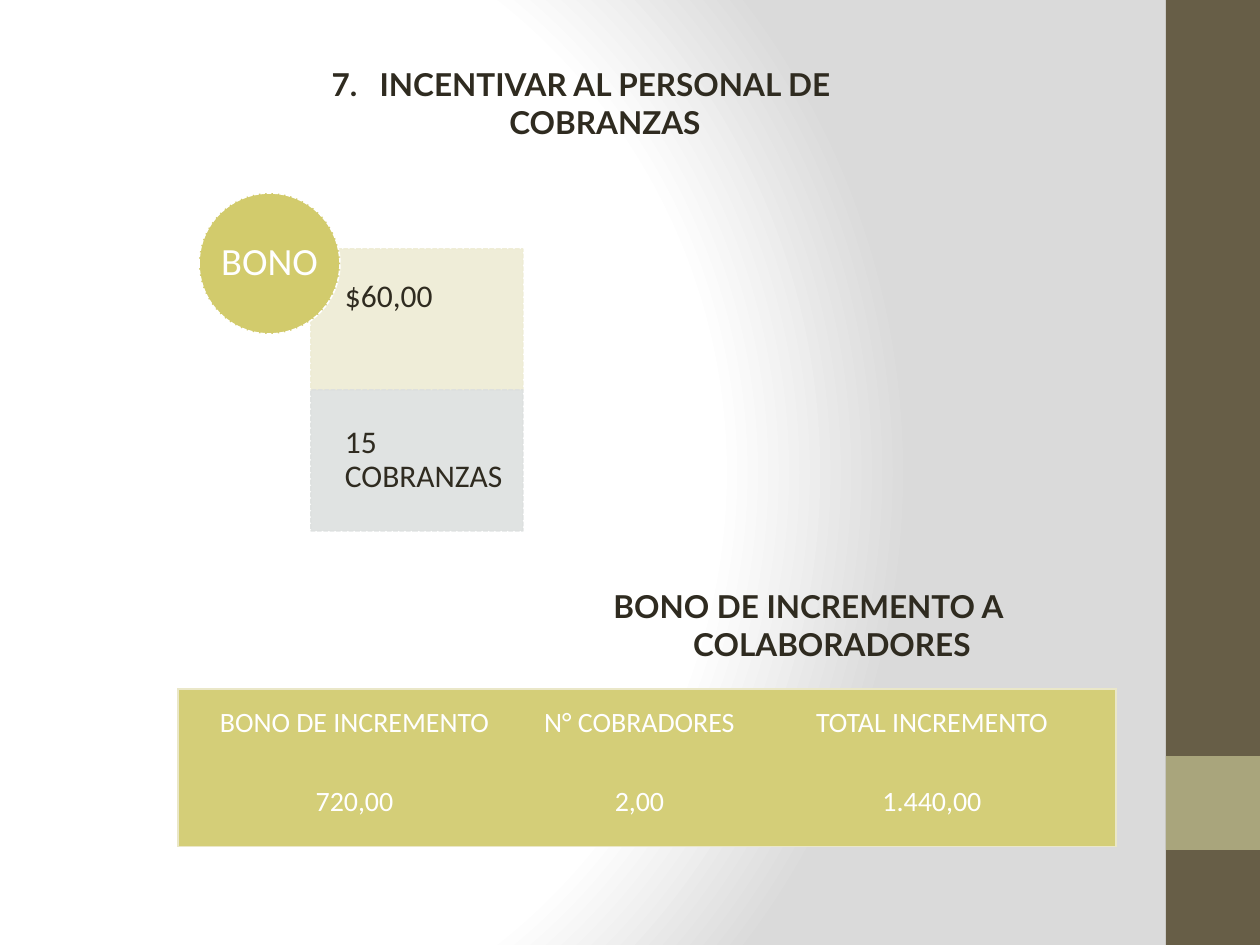
from lxml.etree import SubElement as Sub
from pptx import Presentation
from pptx.dml.color import RGBColor
from pptx.enum.dml import MSO_LINE as Dash
from pptx.enum.shapes import MSO_SHAPE as Kind
from pptx.enum.text import MSO_ANCHOR as Anchor, PP_ALIGN as Align
from pptx.oxml import parse_xml
from pptx.oxml.ns import nsdecls, qn
from pptx.util import Pt

SCALE = 914400 / 126
INK, WHITE, GOLD, EDGE = "2F2B20", "FFFFFF", "D2CB6C", "EAE7C8"
SIDES = ("left", "top", "right", "bottom")
PLAIN = "{2D5ABB26-0587-4C30-8999-92F81FD0307C}"


def px(n):
    return round(n * SCALE)


def paint(fmt, color, alpha=100):
    fmt.solid()
    fmt.fore_color.rgb = RGBColor.from_string(color)
    if alpha < 100:
        for clr in fmt._xPr.iter(qn("a:srgbClr")):
            Sub(clr, qn("a:alpha"), val=str(alpha * 1000))


def write(frame, text, size, color, face="Calibri", bold=False, **form):
    para = frame.paragraphs[0]
    for key, val in form.items():
        setattr(para, key, val)
    run = para.add_run()
    run.text = text
    for key, val in {"size": Pt(size), "name": face, "bold": bold}.items():
        setattr(run.font, key, val)
    paint(run.font.fill, color)
    return para


def block(slide, kind, box, color, edge=None, alpha=100):
    shape = slide.shapes.add_shape(kind, *map(px, box))
    shape.shadow.inherit = False
    paint(shape.fill, color, alpha)
    if edge:
        paint(shape.line.fill, edge, alpha)
        shape.line.width = Pt(0.9)
        shape.line.dash_style = Dash.SQUARE_DOT
    else:
        shape.line.fill.background()


def label(slide, box, pads=None):
    frame = slide.shapes.add_textbox(*map(px, box)).text_frame
    frame.word_wrap = True
    if pads:
        frame.vertical_anchor = Anchor.MIDDLE
        for side, pad in zip(SIDES, pads):
            setattr(frame, "margin_" + side, px(pad))
    return frame


def backdrop(slide):
    paint(slide.background.fill, WHITE)
    old = slide.element.find(".//" + qn("p:bgPr") + "/" + qn("a:solidFill"))
    stops = "".join(
        f'<a:gs pos="{pos}000"><a:srgbClr val="{color}"/></a:gs>'
        for pos, color in ((0, WHITE), (75, WHITE), (100, "DADADA")))
    old.getparent().replace(old, parse_xml(
        f'<a:gradFill {nsdecls("a")} rotWithShape="1"><a:gsLst>{stops}</a:gsLst>'
        '<a:path path="circle"><a:fillToRect l="20000" t="50000" '
        'r="100000" b="50000"/></a:path></a:gradFill>'))


def sidebar(slide, x, y, w, h):
    block(slide, Kind.RECTANGLE, (x, y, w, h), "675E47")
    block(slide, Kind.RECTANGLE, (x, y + h * 4 // 5, w, w), "A9A57C")


def heading(slide, box, text, start=None):
    para = write(label(slide, box), text, 18, INK, "Lato", True,
                 alignment=Align.CENTER)
    props = para._p.get_or_add_pPr()
    for key, val in {"marL": px(48), "indent": px(-48)}.items():
        props.set(key, str(val))
    if start:
        Sub(props, qn("a:buFont"), typeface="Lato")
        Sub(props, qn("a:buAutoNum"), type="arabicPeriod", startAt=str(start))


def bonus(slide, x, y, size):
    left, top, wide, pad = x + 112, y + 56, 212, 18
    rows = (("$60,00", "EEECD4", 63), ("15 COBRANZAS", "DDE0DF", pad))
    for i, (text, color, foot) in enumerate(rows):
        at = top + i * size
        block(slide, Kind.RECTANGLE, (left, at, wide, size), color, color, 90)
        frame = label(slide, (left + 34, at, wide - 34, size), (0, pad, pad, foot))
        write(frame, text, 18, INK, line_spacing=0.9)
    block(slide, Kind.OVAL, (x, y, size, size), GOLD, WHITE)
    inner = (x + 20, y + 20, size - 40, size - 40)
    write(label(slide, inner, (0, 0, 0, 0)), "BONO", 22, WHITE,
          alignment=Align.CENTER, line_spacing=0.9)


def border(cell, sides):
    props = cell._tc.get_or_add_tcPr()
    for side in "LRTB":
        line = Sub(props, qn("a:ln" + side), w=str(Pt(0.75)))
        if side in sides:
            fill = Sub(line, qn("a:solidFill"))
            Sub(fill, qn("a:srgbClr"), val=EDGE)
        else:
            Sub(line, qn("a:noFill"))


def grid(slide, x, y, wides, high, data):
    last, end = len(data) - 1, len(wides) - 1
    box = (x, y, sum(wides), high * len(data))
    table = slide.shapes.add_table(len(data), len(wides), *map(px, box)).table
    table.first_row = table.horz_banding = False
    table._tbl.tblPr.find(qn("a:tableStyleId")).text = PLAIN
    for col, wide in zip(table.columns, wides):
        col.width = px(wide)
    for r, row in enumerate(data):
        table.rows[r].height = px(high)
        for c, text in enumerate(row):
            cell = table.cell(r, c)
            for side, pad in zip(SIDES, (9, 0, 9, 0)):
                setattr(cell, "margin_" + side, px(pad))
            edges = {"L": c == 0, "R": c == end, "T": r == 0, "B": r == last}
            border(cell, [side for side, on in edges.items() if on])
            paint(cell.fill, "D4CE78")
            write(cell.text_frame, text, 16, WHITE,
                  alignment=Align.CENTER, line_spacing=1.5)


def main():
    deck = Presentation()
    deck.slide_width, deck.slide_height = px(1260), px(945)
    slide = deck.slides.add_slide(deck.slide_layouts[6])
    backdrop(slide)
    sidebar(slide, 1166, 0, 94, 945)
    heading(slide, (266, 59, 630, 89), "INCENTIVAR AL PERSONAL DE COBRANZAS", 7)
    bonus(slide, 199, 193, 141)
    grid(slide, 178, 689, (353, 217, 368), 79, (
        ("BONO DE INCREMENTO", "N° COBRADORES", "TOTAL INCREMENTO"),
        ("720,00", "2,00", "1.440,00")))
    heading(slide, (493, 581, 630, 89), "BONO DE INCREMENTO A COLABORADORES")
    deck.save("out.pptx")


if __name__ == "__main__":
    main()
